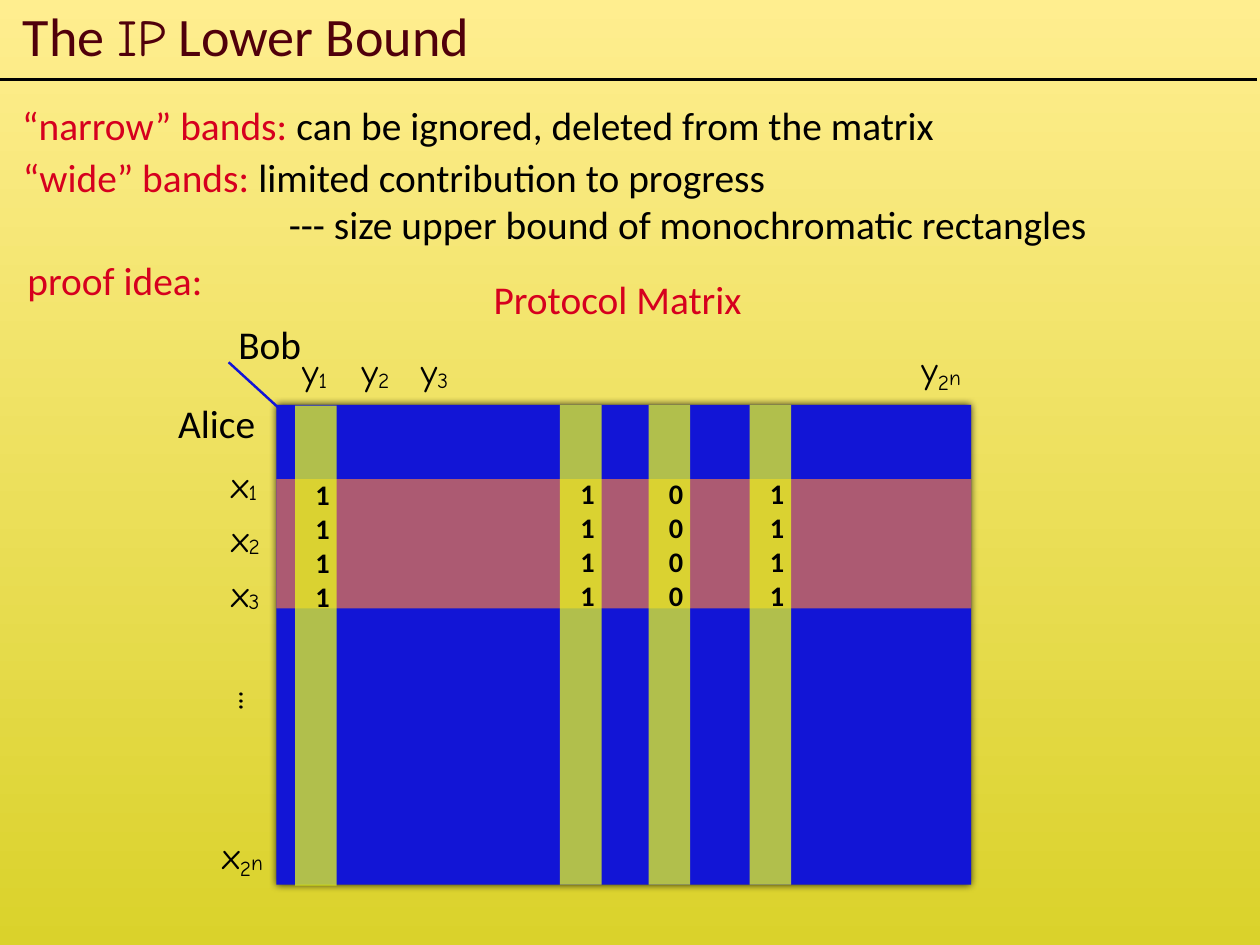
from lxml import etree
from pptx import Presentation
from pptx.dml.color import RGBColor
from pptx.enum.shapes import MSO_CONNECTOR, MSO_SHAPE
from pptx.enum.text import MSO_ANCHOR, MSO_AUTO_SIZE, PP_ALIGN
from pptx.oxml.ns import qn
from pptx.util import Inches, Pt

RECT = MSO_SHAPE.RECTANGLE
LINE = MSO_CONNECTOR.STRAIGHT
TOP, MIDDLE = MSO_ANCHOR.TOP, MSO_ANCHOR.MIDDLE
FIT = MSO_AUTO_SIZE.SHAPE_TO_FIT_TEXT
LEFT = PP_ALIGN.LEFT

BLACK = RGBColor(0x00, 0x00, 0x00)
MAROON = RGBColor(0x50, 0x00, 0x0B)
RED = RGBColor(0xD6, 0x00, 0x1E)
BLUE = RGBColor(0x12, 0x15, 0xD6)
ORANGE = RGBColor(0xFD, 0x7F, 0x3F)
LIME = RGBColor(0xEC, 0xFF, 0x19)
CREAM = RGBColor(0xFF, 0xEE, 0x8F)
GOLD = RGBColor(0xDA, 0xD2, 0x2B)
BODY, MATH = "Calibri", "Comic Neue"


class Board:
    """Holds the style and the current slide."""

    def __init__(self, slide):
        self.slide = slide
        self.size = 32

    def back(self, start, end):
        fill = self.slide.background.fill
        fill.gradient()
        fill.gradient_angle = 270
        for stop, color in zip(fill.gradient_stops, (start, end)):
            stop.color.rgb = color

    def rule(self, x1, y1, x2, y2, color):
        line = self.slide.shapes.add_connector(
            LINE, Inches(x1), Inches(y1), Inches(x2), Inches(y2))
        line.line.color.rgb = color
        line.line.width = Pt(2)
        etree.SubElement(line._element.spPr, qn("a:effectLst"))

    def rect(self, x, y, w, h, color, alpha=None):
        box = self.slide.shapes.add_shape(
            RECT, Inches(x), Inches(y), Inches(w), Inches(h))
        box.shadow.inherit = False
        box.fill.solid()
        box.fill.fore_color.rgb = color
        box.line.fill.background()
        if alpha:
            tone = box._element.spPr.find(".//" + qn("a:srgbClr"))
            etree.SubElement(tone, qn("a:alpha"), val=str(alpha * 1000))
        return box

    def glow(self, box, blur, alpha):
        list_ = box._element.spPr.find(qn("a:effectLst"))
        shade = etree.SubElement(list_, qn("a:outerShdw"),
                                 blurRad=str(Pt(blur)), dist="0", dir="0")
        tone = etree.SubElement(shade, qn("a:srgbClr"), val=str(BLACK))
        etree.SubElement(tone, qn("a:alpha"), val=str(alpha * 1000))

    def text(self, x, y, w, h, *lines, wrap=True):
        """Each line is a list of (words, color) pairs."""
        box = self.slide.shapes.add_textbox(
            Inches(x), Inches(y), Inches(w), Inches(h))
        frame = box.text_frame
        frame.margin_left = frame.margin_right = 0
        frame.margin_top = frame.margin_bottom = 0
        frame.vertical_anchor = MIDDLE
        frame.word_wrap = wrap
        if not wrap:
            frame.auto_size = FIT
        for i, line in enumerate(lines):
            para = frame.add_paragraph() if i else frame.paragraphs[0]
            para.font.name, para.font.size = BODY, Pt(self.size)
            for words, color in line:
                run = para.add_run()
                run.text = words
                run.font.color.rgb = color
        return box

    def label(self, x, y, w, h, words, color=BLACK):
        return self.text(x, y, w, h, [(words, color)], wrap=False)

    def term(self, x, y, w, h, *parts, size=30):
        """Each part is a (sign, baseline percent) pair."""
        box = self.text(x, y, w, h, [(sign, BLACK) for sign, _ in parts],
                        wrap=False)
        para = box.text_frame.paragraphs[0]
        para.font.name, para.font.size = MATH, Pt(size)
        for run, (_, base) in zip(para.runs, parts):
            if base:
                run.font._element.set("baseline", str(base * 1000))
        return box

    def band(self, x, y, digit):
        box = self.rect(x, y, 0.47, 5.42, LIME, 73)
        frame = box.text_frame
        frame.vertical_anchor = TOP
        frame.margin_left, frame.margin_top = Inches(0.23), Inches(0.81)
        frame.margin_right = frame.margin_bottom = 0
        frame.text = "\n".join(digit * 4)
        for para in frame.paragraphs:
            para.alignment = LEFT
            para.font.name, para.font.size = BODY, Pt(23)
            para.font.bold = True
            para.font.color.rgb = BLACK


def main():
    deck = Presentation()
    deck.slide_width, deck.slide_height = Inches(14.22), Inches(10.67)
    board = Board(deck.slides.add_slide(deck.slide_layouts[6]))
    board.back(CREAM, GOLD)

    # Title
    board.rule(0, 0.9, 14.19, 0.9, BLACK)
    title = board.text(0.26, -0.03, 14, 0.85, [
        ("The ", MAROON), ("IP", MAROON), (" Lower Bound", MAROON)])
    para = title.text_frame.paragraphs[0]
    para.font.size = Pt(44)
    para.runs[1].font.name, para.runs[1].font.size = MATH, Pt(42)

    # Claims
    board.text(0.25, 1.08, 14.01, 0.65, [
        ("“narrow” bands: ", RED),
        ("can be ignored, deleted from the matrix", BLACK)])
    wide = board.text(
        0.26, 1.69, 13.7, 1.15,
        [("“wide” bands: ", RED), ("limited contribution to progress", BLACK)],
        [("--- size upper bound of monochromatic rectangles", BLACK)])
    props = wide.text_frame.paragraphs[1]._p.get_or_add_pPr()
    props.set("marL", str(Inches(3)))
    board.label(0.31, 2.85, 2.06, 0.61, "proof idea:", RED)
    board.label(5.57, 3.07, 3.43, 0.61, "Protocol Matrix", RED)

    # Matrix and its players
    matrix = board.rect(3.12, 4.57, 7.84, 5.42, BLUE)
    board.glow(matrix, 6, 80)
    board.rule(2.58, 4.09, 3.16, 4.62, BLUE)
    board.label(2.01, 4.47, 1.02, 0.61, "Alice")
    board.label(2.69, 3.58, 0.84, 0.61, "Bob")

    # Row and column names
    for i in range(3):
        sub = (str(i + 1), -6)
        width = 0.51 if i else 0.46
        board.term(2.61, 5.15 + 0.615 * i, width, 0.62, ("x", 0), sub)
        board.term(3.41 + 0.67 * i, 3.88, width, 0.62, ("y", 0), sub)
    for x, y, name in ((2.51, 9.33, "x"), (10.4, 3.85, "y")):
        board.term(x, y, 0.66, 0.68, (name, 0), ("2", -19), ("n", -3))
    dots = board.term(2.3, 7.37, 0.51, 0.79, ("...", 0), size=33)
    dots.rotation = 270

    # Wide band of rows, then the columns across it
    board.rect(3.12, 5.41, 7.84, 1.46, ORANGE, 66)
    for x, y, digit in ((6.32, 4.57, "1"), (7.32, 4.57, "0"),
                        (3.33, 4.58, "1"), (8.46, 4.57, "1")):
        board.band(x, y, digit)

    deck.save("out.pptx")


if __name__ == "__main__":
    main()
